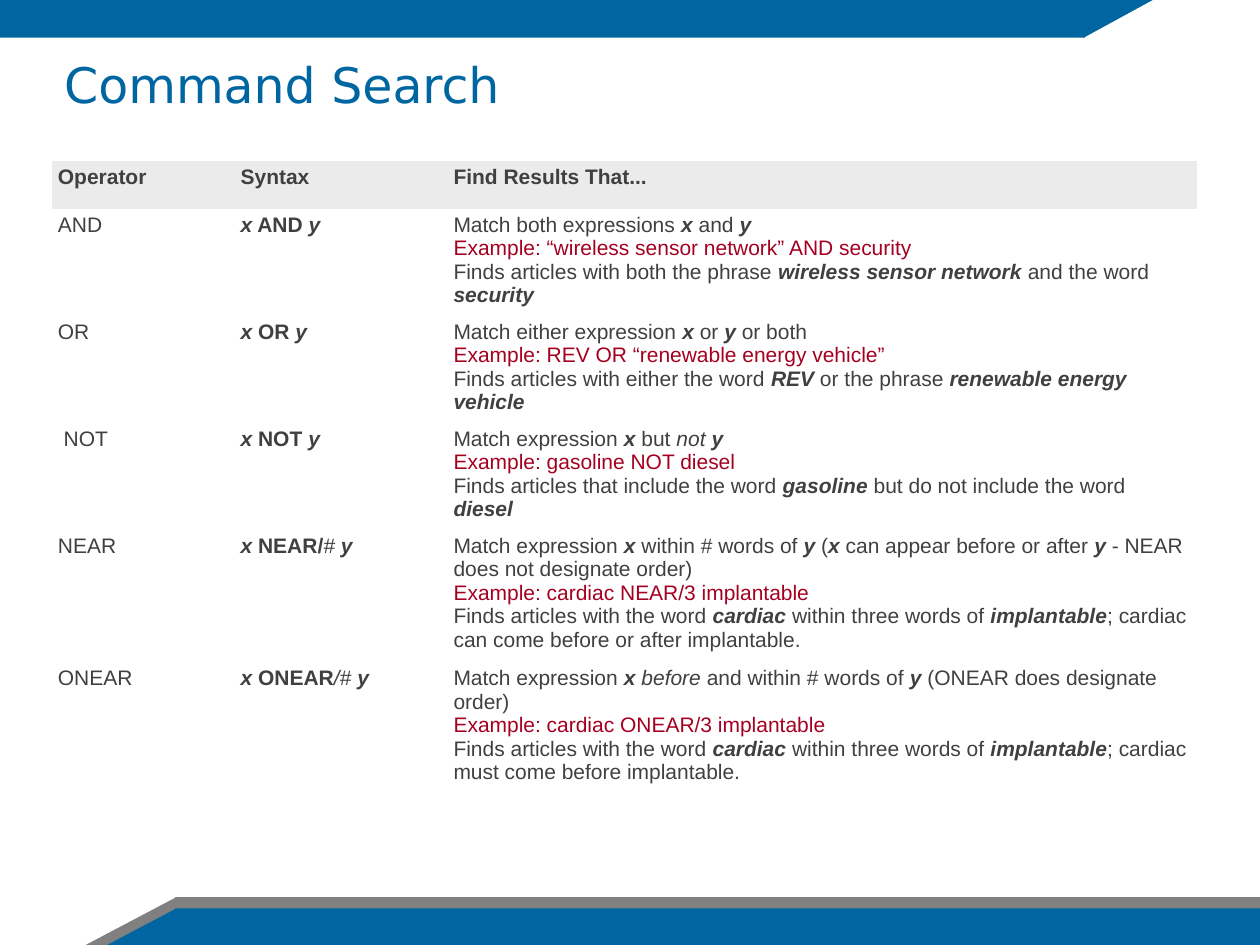
import pptx
import pptx.util
import pptx.dml.color
import pptx.enum.shapes
import pptx.enum.text

RGB = pptx.dml.color.RGBColor
BLUE = RGB(0x00, 0x66, 0xA1)
GREY = RGB(0x80, 0x80, 0x80)
PALE = RGB(0xEB, 0xEB, 0xEB)
DARK = RGB(0x40, 0x40, 0x40)
RED = RGB(0xA5, 0x00, 0x21)
WHITE = RGB(0xFF, 0xFF, 0xFF)
SHAPE = pptx.enum.shapes.MSO_SHAPE
ANCHOR = pptx.enum.text.MSO_ANCHOR
ALIGN = pptx.enum.text.PP_ALIGN
COLS, ROWS = 100, 75
LAP = 0.1
PLAIN = "{2D5ABB26-0587-4C30-8999-92F81FD0307C}"

HEAD = ["*Operator*", "*Syntax*", "*Find Results That...*"]
BODY = [
    ["AND", "*_x_ AND _y_*", [
        "Match both expressions *_x_* and *_y_*",
        "Example: “wireless sensor network” AND security",
        "Finds articles with both the phrase *_wireless sensor network_* and the word *_security_*"]],
    ["OR", "*_x_ OR _y_*", [
        "Match either expression *_x_* or *_y_* or both",
        "Example: REV OR “renewable energy vehicle”",
        "Finds articles with either the word *_REV_* or the phrase *_renewable energy vehicle_*"]],
    [" NOT", "*_x_ NOT _y_*", [
        "Match expression *_x_* but _not *y*_",
        "Example: gasoline NOT diesel",
        "Finds articles that include the word *_gasoline_* but do not include the word *_diesel_*"]],
    ["NEAR", "*_x_ NEAR/*_# *y*_", [
        "Match expression *_x_* within # words of *_y_* (*_x_* can appear before or after *_y_*"
        " - NEAR does not designate order)",
        "Example: cardiac NEAR/3 implantable",
        "Finds articles with the word *_cardiac_* within three words of *_implantable_*;"
        " cardiac can come before or after implantable."]],
    ["ONEAR", "*_x_ ONEAR*_/# *y*_", [
        "Match expression *_x_* _before_ and within # words of *_y_* (ONEAR does designate order)",
        "Example: cardiac ONEAR/3 implantable",
        "Finds articles with the word *_cardiac_* within three words of *_implantable_*;"
        " cardiac must come before implantable."]],
]


def unit(count):
    return pptx.util.Inches(count / 10)


def write(para, text, font="Arial", size=12, color=DARK, align=ALIGN.LEFT):
    para.alignment = align
    for i, part in enumerate(text.split("*")):
        for j, piece in enumerate(part.split("_")):
            slant = (text.split("*")[:i] and "*".join(text.split("*")[:i]).count("_") or 0) + j
            if piece:
                run = para.add_run()
                run.text = piece
                run.font.name = font
                run.font.size = pptx.util.Pt(size)
                run.font.bold = i % 2 == 1
                run.font.italic = slant % 2 == 1
                run.font.color.rgb = color


def pad(area, left, top):
    area.margin_left = area.margin_right = unit(left)
    area.margin_top = area.margin_bottom = unit(top)
    area.vertical_anchor = ANCHOR.TOP


def block(slide, kind, box, color):
    shape = slide.shapes.add_shape(kind, *map(unit, box))
    shape.shadow.inherit = False
    shape.fill.solid()
    shape.fill.fore_color.rgb = color
    shape.line.fill.background()
    return shape


def band(slide, box, slant, color, top=False):
    x, y, w, h = box
    start = x if top else x + slant - LAP
    edge = x + w - slant if top else x
    block(slide, SHAPE.RECTANGLE, (start, y, w - slant + LAP, h), color)
    tip = block(slide, SHAPE.RIGHT_TRIANGLE, (edge, y, slant, h), color)
    tip._element.spPr.xfrm.set("flipV" if top else "flipH", "1")


def title(slide, box, text):
    shape = slide.shapes.title
    shape.left, shape.top, shape.width, shape.height = map(unit, box)
    frame = shape.text_frame
    frame.word_wrap = True
    frame.auto_size = pptx.enum.text.MSO_AUTO_SIZE.NONE
    pad(frame, 1, 0.8)
    write(frame.paragraphs[0], text, font="DejaVu Sans", size=28, color=BLUE)


def grid(slide, box, wide, high):
    frame = slide.shapes.add_table(len(high), len(wide), *map(unit, box))
    table = frame.table
    table.horz_banding = table.first_row = False
    table._tbl.tblPr[0].text = PLAIN
    for col, width in zip(table.columns, wide):
        col.width = unit(width)
    for row, height in zip(table.rows, high):
        row.height = unit(height)
    for r, line in enumerate([HEAD] + BODY):
        for c, item in enumerate(line):
            cell = table.cell(r, c)
            pad(cell, 0.5, 0.3)
            if r:
                cell.fill.background()
            else:
                cell.fill.solid()
                cell.fill.fore_color.rgb = PALE
            texts = item if isinstance(item, list) else [item]
            for n, text in enumerate(texts):
                para = cell.text_frame.add_paragraph() if n else cell.text_frame.paragraphs[0]
                write(para, text, color=RED if n == 1 else DARK)


def main():
    deck = pptx.Presentation()
    deck.slide_width, deck.slide_height = unit(COLS), unit(ROWS)
    slide = deck.slides.add_slide(deck.slide_layouts[5])
    slide.background.fill.solid()
    slide.background.fill.fore_color.rgb = WHITE
    band(slide, (6.8, 71.2, COLS - 6.8, ROWS - 71.2), 7.2, GREY)
    band(slide, (8.5, 72.1, COLS - 8.5, ROWS - 72.1), 5.5, BLUE)
    band(slide, (0, 0, 91.5, 3), 5.5, BLUE, top=True)
    title(slide, (4.1, 3.5, 90, 10.7), "Command Search")
    grid(slide, (4.1, 12.8, 90.9, 52.3), (14.5, 16.9, 59.5),
         (3.8, 8.5, 8.5, 8.5, 10.5, 12.5))
    deck.save("out.pptx")


if __name__ == "__main__":
    main()
